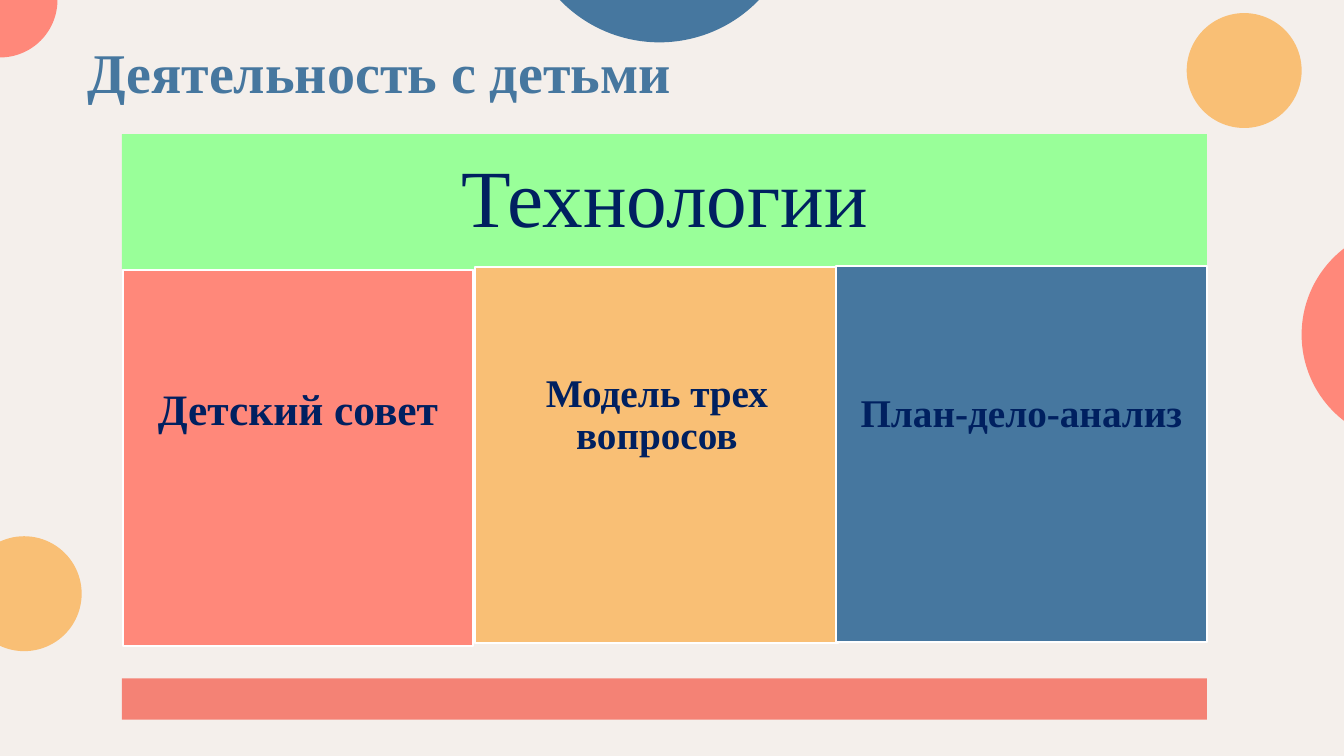
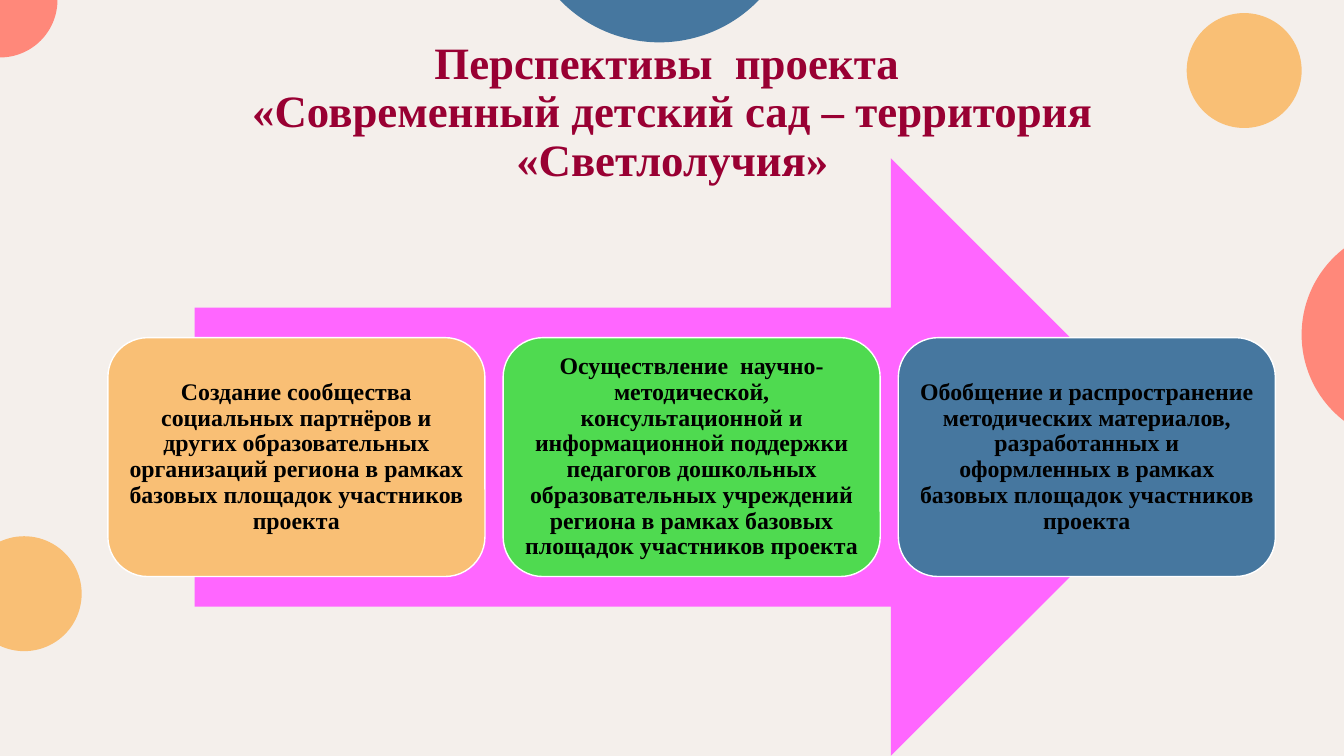
from pptx import Presentation
from pptx.dml.color import RGBColor
from pptx.enum.shapes import MSO_SHAPE
from pptx.enum.text import MSO_ANCHOR, PP_ALIGN
from pptx.util import Inches, Pt

RECT, OVAL = MSO_SHAPE.RECTANGLE, MSO_SHAPE.OVAL
ROUNDED, ARROW = MSO_SHAPE.ROUNDED_RECTANGLE, MSO_SHAPE.RIGHT_ARROW
LEFT, CENTER, MIDDLE = PP_ALIGN.LEFT, PP_ALIGN.CENTER, MSO_ANCHOR.MIDDLE

CREAM = RGBColor(0xF4, 0xEF, 0xEB)
CORAL = RGBColor(0xFF, 0x88, 0x7A)
DARK_CORAL = RGBColor(0xF4, 0x82, 0x75)
SAND = RGBColor(0xF9, 0xBF, 0x75)
BLUE = RGBColor(0x46, 0x77, 0x9F)
NAVY = RGBColor(0x00, 0x20, 0x60)
MINT = RGBColor(0x99, 0xFF, 0x99)
GREEN = RGBColor(0x4F, 0xDA, 0x50)
PINK = RGBColor(0xFF, 0x66, 0xFF)
CRIMSON = RGBColor(0x99, 0x00, 0x33)
WHITE = RGBColor(0xFF, 0xFF, 0xFF)
BLACK = RGBColor(0x00, 0x00, 0x00)

FONT = "Times New Roman"
TITLE_SIZE = (11.5, 1.45)

# Circles on every slide: left, top, diameter, colour
CIRCLES = [
    (-0.57, -0.57, 1.14, CORAL),
    (12.91, 2.24, 2.16, CORAL),
    (-0.33, 5.32, 1.14, SAND),
    (11.77, 0.13, 1.14, SAND),
    (5.17, -2.32, 2.74, BLUE),
]

# Slide 1
ACTIVITY_TITLE = "Деятельность с детьми"
BAND_LEFT, BAND_WIDTH = 1.21, 10.76
HEADING = "Технологии"
COLUMN_HEIGHT = 3.73
# text, left, top, width, colour, font size, inset, extra space below text
COLUMNS = [
    ("Детский совет", 1.22, 2.68, 3.47, CORAL, 31, 0.13, 0.93),
    ("Модель трех вопросов", 4.71, 2.65, 3.61, SAND, 28, 0.08, 0.78),
    ("План-дело-анализ", 8.29, 2.64, 3.68, BLUE, 28, 0.08, 0.78),
]

# Slide 2
PROSPECTS_TITLE = ("Перспективы  проекта \v"
                   "«Современный детский сад – территория «Светлолучия»")
CARD_LEFT, CARD_TOP, CARD_WIDTH, CARD_HEIGHT = 1.07, 3.35, 3.74, 2.37
CARD_STEP = CARD_WIDTH + 0.18
CARDS = [
    ("Создание сообщества социальных партнёров и других образовательных "
     "организаций региона в рамках базовых площадок участников проекта", SAND),
    ("Осуществление  научно-методической, консультационной и информационной "
     "поддержки педагогов дошкольных образовательных учреждений региона "
     "в рамках базовых площадок участников проекта", GREEN),
    ("Обобщение и распространение методических материалов, разработанных "
     "и оформленных в рамках базовых площадок участников проекта", BLUE),
]


def write(sp, text, size, color, bold=True, align=CENTER, inset=None, below=0):
    """Fill a shape with one centred-height paragraph; below lifts the text."""
    tf = sp.text_frame
    tf.word_wrap = True
    tf.vertical_anchor = MIDDLE
    if inset is not None:
        for side in ("left", "top", "right", "bottom"):
            extra = below if side == "bottom" else 0
            setattr(tf, f"margin_{side}", Inches(inset + extra))
    p = tf.paragraphs[0]
    p.text = text
    p.alignment = align
    p.line_spacing = 0.9
    for r in p.runs:
        r.font.color.rgb = color
        for name, value in dict(name=FONT, size=Pt(size), bold=bold).items():
            setattr(r.font, name, value)


def add_shape(s, kind, box, fill, outlined=False):
    sp = s.shapes.add_shape(kind, *map(Inches, box))
    sp.shadow.inherit = False
    sp.fill.solid()
    sp.fill.fore_color.rgb = fill
    if outlined:
        sp.line.color.rgb = WHITE
        sp.line.width = Pt(1)
    else:
        sp.line.fill.background()
    return sp


def add_slide(prs):
    s = prs.slides.add_slide(prs.slide_layouts[6])
    s.background.fill.solid()
    s.background.fill.fore_color.rgb = CREAM
    for left, top, diameter, color in CIRCLES:
        add_shape(s, OVAL, (left, top, diameter, diameter), color)
    return s


def add_title(s, text, left, top, size, color, align):
    title = s.shapes.add_textbox(*map(Inches, (left, top, *TITLE_SIZE)))
    write(title, text, size, color, align=align)


def build_activity(prs):
    s = add_slide(prs)
    add_title(s, ACTIVITY_TITLE, 0.77, 0.02, 40, BLUE, LEFT)
    heading = add_shape(s, RECT, (BAND_LEFT, 1.33, BAND_WIDTH, 1.34), MINT)
    write(heading, HEADING, 58, NAVY, bold=False, inset=0.24)
    for text, left, top, width, color, size, inset, below in COLUMNS:
        column = add_shape(s, RECT, (left, top, width, COLUMN_HEIGHT), color, True)
        write(column, text, size, NAVY, inset=inset, below=below)
    add_shape(s, RECT, (BAND_LEFT, 6.73, BAND_WIDTH, 0.41), DARK_CORAL)


def build_prospects(prs):
    s = add_slide(prs)
    add_title(s, PROSPECTS_TITLE, 0.92, 0.4, 32, CRIMSON, CENTER)
    add_shape(s, ARROW, (1.93, 1.57, 9.87, 5.93), PINK)
    for i, (text, color) in enumerate(CARDS):
        box = (CARD_LEFT + i * CARD_STEP, CARD_TOP, CARD_WIDTH, CARD_HEIGHT)
        card = add_shape(s, ROUNDED, box, color, True)
        write(card, text, 17, BLACK, inset=0.07)


def main():
    prs = Presentation()
    prs.slide_width, prs.slide_height = Inches(13.33), Inches(7.5)
    build_activity(prs)
    build_prospects(prs)
    prs.save("out.pptx")


if __name__ == "__main__":
    main()
